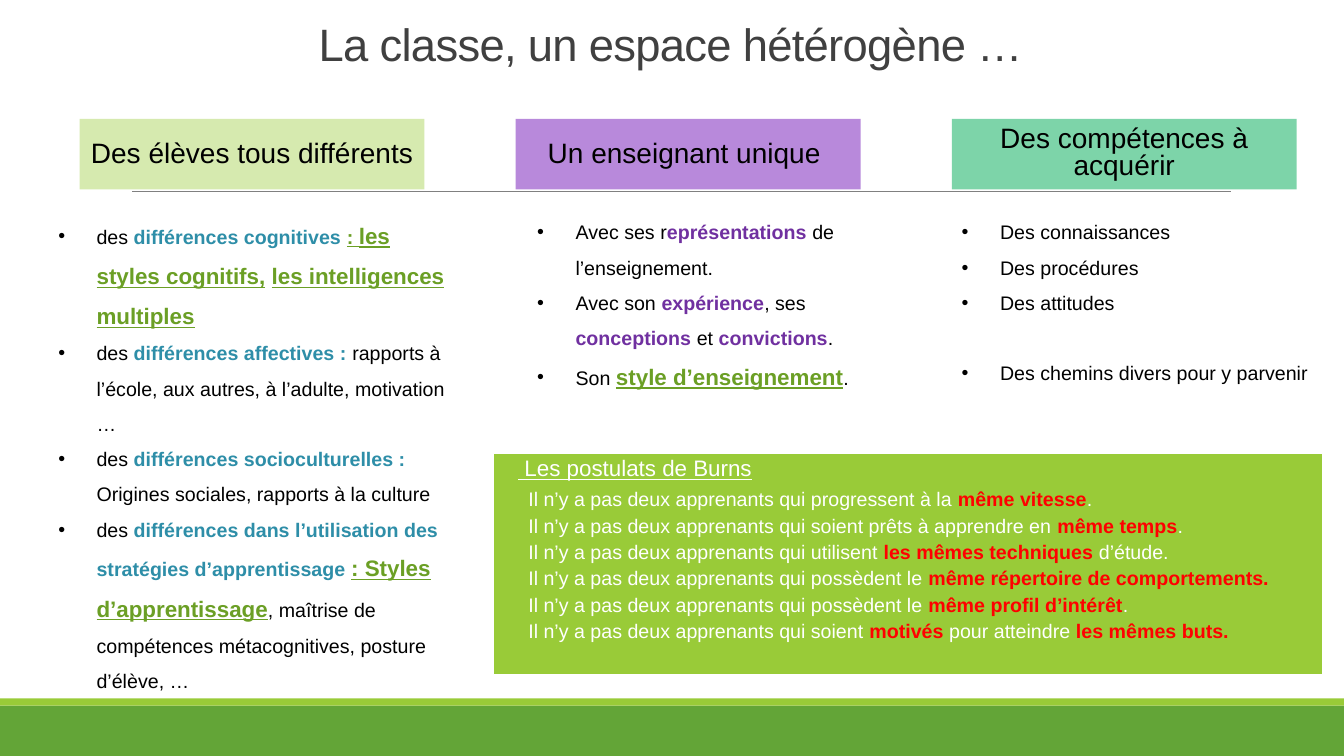
from lxml.etree import SubElement
from pptx import Presentation
from pptx.dml.color import RGBColor
from pptx.enum.shapes import MSO_CONNECTOR, MSO_SHAPE
from pptx.enum.text import MSO_ANCHOR, MSO_AUTO_SIZE, PP_ALIGN
from pptx.oxml.ns import qn
from pptx.util import Inches, Pt

TITLE = "La classe, un espace hétérogène …"

STYLES = {
    "title": {"size": 32.4, "color": "404040"},
    "header": {"size": 20, "color": "000000"},
    "plain": {"size": 14, "color": "000000"},
    "blue": {"size": 14, "color": "2E8EA8", "bold": True},
    "purple": {"size": 14, "color": "7030A0", "bold": True},
    "small link": {"size": 14, "color": "6B9F25", "bold": True, "underline": True},
    "link": {"size": 16, "color": "6B9F25", "bold": True, "underline": True},
    "gap": {"size": 16, "color": "000000", "bold": True},
    "heading": {"size": 16, "color": "FFFFFF", "underline": True},
    "white": {"size": 14, "color": "FFFFFF"},
    "red": {"size": 14, "color": "FF0000", "bold": True},
}

PUPILS = [
    [("des ", "plain"), ("différences cognitives ", "blue"), (": ", "small link"),
     ("les styles cognitifs,", "link"), (" ", "gap"),
     ("les intelligences multiples", "link")],
    [("des ", "plain"), ("différences affectives : ", "blue"),
     ("rapports à l’école, aux autres, à l’adulte, motivation …", "plain")],
    [("des ", "plain"), ("différences socioculturelles : ", "blue"),
     ("Origines sociales, rapports à la culture", "plain")],
    [("des ", "plain"),
     ("différences dans l’utilisation des stratégies d’apprentissage ", "blue"),
     (": Styles d’apprentissage", "link"),
     (", maîtrise de compétences métacognitives, posture d’élève, …", "plain")],
]
TEACHER = [
    [("Avec ses r", "plain"), ("eprésentations ", "purple"),
     ("de l’enseignement.", "plain")],
    [("Avec son ", "plain"), ("expérience", "purple"), (", ses ", "plain"),
     ("conceptions", "purple"), (" et ", "plain"), ("convictions", "purple"),
     (".", "plain")],
    [("Son ", "plain"), ("style d’enseignement", "link"), (".", "plain")],
]
SKILLS = [
    [("Des connaissances", "plain")],
    [("Des procédures", "plain")],
    [("Des attitudes", "plain")],
    [("Des chemins divers pour y parvenir", "plain")],
]

# header, fill, line spacing, list, (list left, width, height), space before last item
COLUMNS = [
    ("Des élèves tous différents", "D6EAAF", 0.9, PUPILS, (0.48, 4.04, 4.95), 0),
    ("Un enseignant unique ", "B889DB", 0.9, TEACHER, (5.23, 3.42, 1.92), 0),
    ("Des compétences à acquérir", "7DD4A9", 0.8, SKILLS, (9.44, 3.7, 1.87), 25),
]

POSTULATES_HEADING = " Les postulats de Burns"
LEARNERS = "Il n’y a pas deux apprenants qui "
POSTULATES = [
    [("progressent à la ", "white"), ("même vitesse", "red"), (".", "white")],
    [("soient prêts à apprendre en ", "white"), ("même temps", "red"), (".", "white")],
    [("utilisent ", "white"), ("les mêmes techniques", "red"), (" d’étude.", "white")],
    [("possèdent le ", "white"), ("même répertoire de comportements.", "red")],
    [("possèdent le ", "white"), ("même profil d’intérêt", "red"), (".", "white")],
    [("soient ", "white"), ("motivés", "red"), (" pour atteindre ", "white"),
     ("les mêmes buts.", "red")],
]

BARS = [(7, 0.5, "63A537"), (6.93, 0.07, "99CB38")]
HEADER_LEFT, HEADER_STEP, HEADER_TOP = 0.79, 4.325, 1.18
HEADER_SIZE = (3.42, 0.7)
LIST_TOP = 2.02


def rgb(value):
    return RGBColor.from_string(value)


def set_fill(shape, color):
    shape.fill.solid()
    shape.fill.fore_color.rgb = rgb(color)


def add_block(page, left, top, width, height, color):
    block = page.shapes.add_shape(MSO_SHAPE.RECTANGLE, Inches(left), Inches(top),
                                  Inches(width), Inches(height))
    block.shadow.inherit = False
    set_fill(block, color)
    block.line.fill.background()
    return block


def place(shape, left, top, width, height):
    lengths = {"left": left, "top": top, "width": width, "height": height}
    for name, value in lengths.items():
        setattr(shape, name, Inches(value))


def write(para, spans, margin=0, indent=0, bullet=None, **formats):
    for text, style in spans:
        span = para.add_run()
        span.text = text
        values = {"name": "Arial", "bold": False, "underline": False, **STYLES[style]}
        span.font.color.rgb = rgb(values.pop("color"))
        values["size"] = Pt(values["size"])
        for name, value in values.items():
            setattr(span.font, name, value)
    for name, value in formats.items():
        setattr(para, name, value)
    properties = para._p.get_or_add_pPr()
    properties.set("marL", str(Inches(margin)))
    properties.set("indent", str(Inches(indent)))
    if bullet:
        SubElement(properties, qn("a:buFont")).set("typeface", "Arial")
        SubElement(properties, qn("a:buChar")).set("char", bullet)
    else:
        SubElement(properties, qn("a:buNone"))


def next_para(frame, index):
    return frame.add_paragraph() if index else frame.paragraphs[0]


def add_title(page):
    title = page.shapes.title
    place(title, 0.9, 0.28, 11.5, 0.47)
    set_fill(title, "FFFFFF")
    frame = title.text_frame
    frame.auto_size = MSO_AUTO_SIZE.NONE
    frame.vertical_anchor = MSO_ANCHOR.BOTTOM
    para = frame.paragraphs[0]
    write(para, [(TITLE, "title")], alignment=PP_ALIGN.CENTER, line_spacing=0.85)
    para.runs[0].font._element.set("spc", "-50")


def add_postulates(page):
    body = page.placeholders[1]
    place(body, 4.89, 4.49, 8.24, 2.21)
    set_fill(body, "99CB38")
    body.line.color.rgb = rgb("FFFFFF")
    body.line.width = Pt(2)
    frame = body.text_frame
    frame.auto_size = MSO_AUTO_SIZE.NONE
    frame.margin_left = frame.margin_right = 0
    write(frame.paragraphs[0], [(POSTULATES_HEADING, "heading")], margin=0.25,
          line_spacing=0.9, space_before=Pt(12), space_after=Pt(2))
    for spans in POSTULATES:
        write(frame.add_paragraph(), [(LEARNERS, "white")] + spans, margin=0.35,
              level=1, line_spacing=0.9, space_before=Pt(3.7))


def add_backdrop(page):
    for top, height, color in BARS:
        add_block(page, 0, top, 13.33, height, color)
    rule = page.shapes.add_connector(MSO_CONNECTOR.STRAIGHT, Inches(1.31), Inches(1.9),
                                     Inches(12.21), Inches(1.9))
    rule.line.color.rgb = rgb("808080")
    rule.line.width = Pt(0.5)
    SubElement(rule._element.spPr, qn("a:effectLst"))


def add_column(page, number, header, color, spacing, items, area, last_gap):
    block = add_block(page, HEADER_LEFT + number * HEADER_STEP, HEADER_TOP,
                      *HEADER_SIZE, color)
    block.text_frame.vertical_anchor = MSO_ANCHOR.MIDDLE
    write(block.text_frame.paragraphs[0], [(header, "header")],
          alignment=PP_ALIGN.CENTER, line_spacing=spacing)

    left, width, height = area
    box = page.shapes.add_textbox(Inches(left), Inches(LIST_TOP), Inches(width),
                                  Inches(height))
    frame = box.text_frame
    frame.word_wrap = True
    frame.auto_size = MSO_AUTO_SIZE.SHAPE_TO_FIT_TEXT
    for index, spans in enumerate(items):
        gap = last_gap if index == len(items) - 1 else 0
        write(next_para(frame, index), spans, margin=0.38, indent=-0.38, bullet="•",
              line_spacing=1.5, space_before=Pt(gap))


def main():
    deck = Presentation()
    deck.slide_width, deck.slide_height = Inches(13.33), Inches(7.5)
    page = deck.slides.add_slide(deck.slide_layouts[1])
    add_title(page)
    add_postulates(page)
    add_backdrop(page)
    for number, column in enumerate(COLUMNS):
        add_column(page, number, *column)
    deck.save("out.pptx")


if __name__ == "__main__":
    main()
